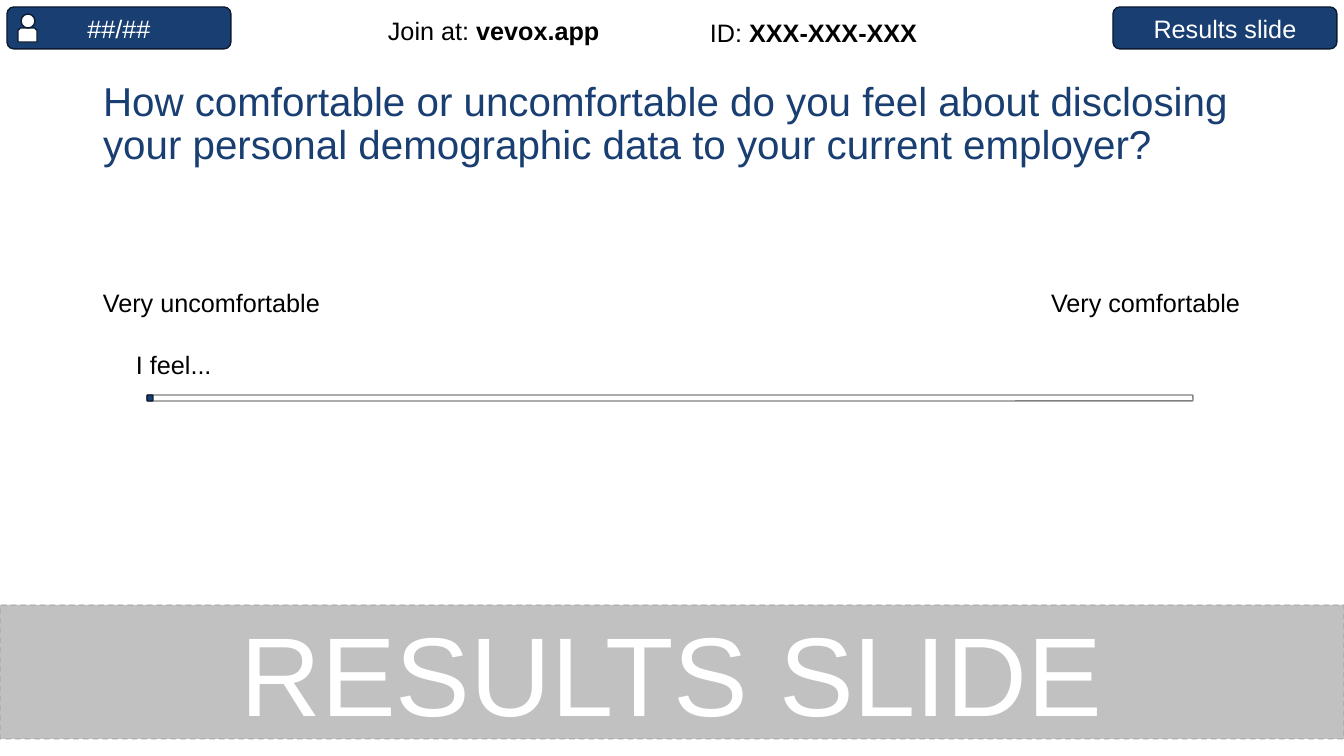
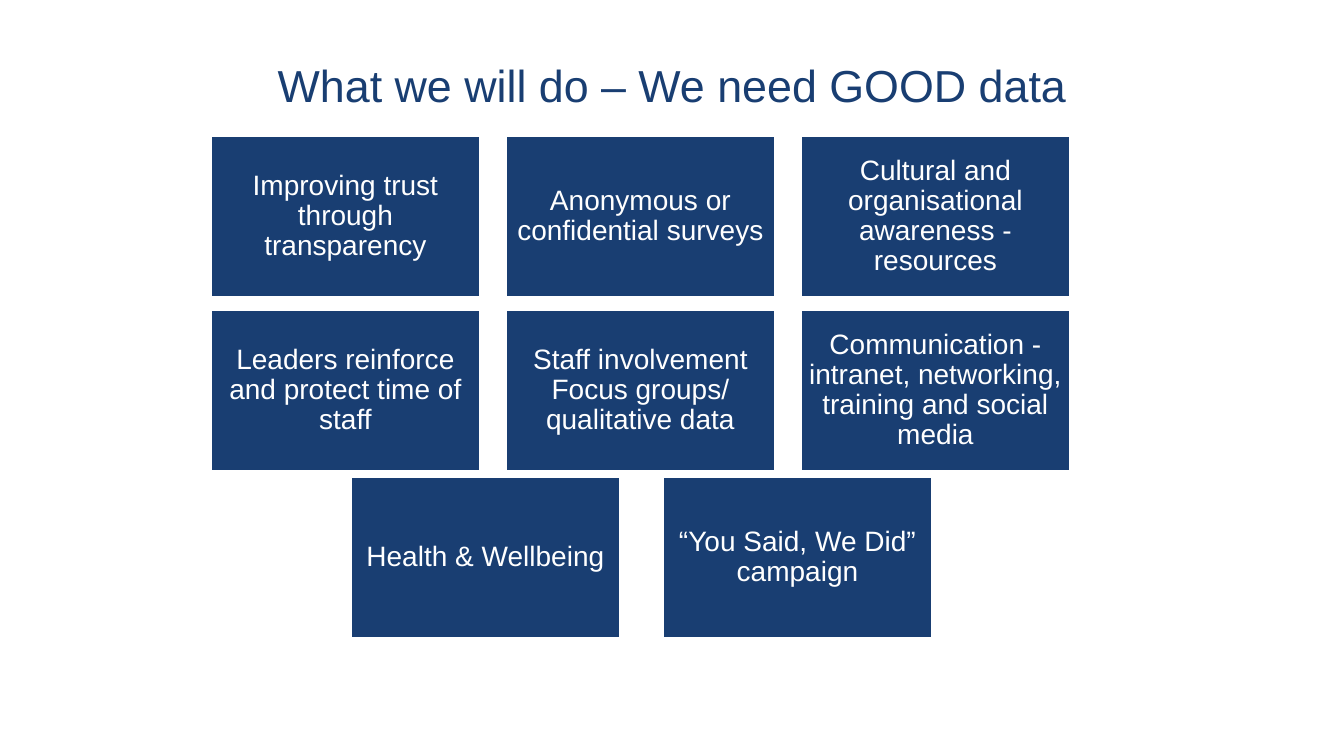
from dataclasses import dataclass

from lxml import etree
from pptx import Presentation
from pptx import util as u
from pptx.dml.color import RGBColor
from pptx.enum import dml, shapes, text
from pptx.oxml.ns import qn

Shape = shapes.MSO_SHAPE
Align = text.PP_ALIGN
Anchor = text.MSO_ANCHOR


@dataclass(frozen=True)
class Theme:
    font: str = "Arial"
    navy: str = "193E72"
    outline: str = "0B1B32"
    white: str = "FFFFFF"
    black: str = "000000"
    grey: str = "808080"
    band: str = "666666"
    band_opacity: int = 40
    question_size: float = 28.8
    title_size: float = 32
    label_size: float = 18
    card_size: float = 20
    band_size: float = 80


THEME = Theme()
SLIDE_SIZE = (1344, 756)
PX = u.Inches(1) / 100.8

# Content: poll slide
QUESTION = ("How comfortable or uncomfortable do you feel about disclosing "
            "your personal demographic data to your current employer?")
BADGES = [(7, "##/##"), (1113, "Results slide")]
PERSON = [(Shape.SNIP_2_SAME_RECTANGLE, (18, 28, 19, 14)),
          (Shape.OVAL, (21, 14, 14, 14))]
# Box, plain text, bold text, alignment
POLL_LABELS = [
    ((378, 10, 266, 42), "Join at: ", "vevox.app", Align.LEFT),
    ((700, 12, 266, 42), "ID: ", "XXX-XXX-XXX", Align.LEFT),
    ((93, 282, 565, 27), "Very uncomfortable", "", Align.LEFT),
    ((685, 282, 565, 27), "Very comfortable", "", Align.RIGHT),
    ((126, 344, 1159, 43), "I feel...", "", Align.LEFT),
]
SCALE_BAR = (147, 395, 1046, 6)
BAND = ((0, 605, 1344, 134), "RESULTS SLIDE")

# Content: actions slide
ACTIONS_TITLE = "What we will do – We need GOOD data"
CARD_SIZE = (269, 161)
# Top, left, column pitch, labels
CARD_ROWS = [
    (136, 211, 295, ["Improving trust through transparency",
                     "Anonymous or confidential surveys",
                     "Cultural and organisational awareness - resources"]),
    (310, 211, 295, ["Leaders reinforce and protect time of staff",
                     "Staff involvement Focus groups/ qualitative data",
                     "Communication - intranet, networking, training and social media"]),
    (477, 351, 312, ["Health & Wellbeing", "“You Said, We Did” campaign"]),
]


def px(value):
    return u.Emu(round(value * PX))


def place(box):
    return [px(value) for value in box]


def rgb(code):
    return RGBColor.from_string(code)


def style(paragraph, size, color, align=Align.LEFT, spacing=None):
    paragraph.alignment = align
    paragraph.line_spacing = spacing
    paragraph.font.name = THEME.font
    paragraph.font.size = u.Pt(size)
    paragraph.font.color.rgb = rgb(color)


def set_opacity(fill, percent):
    color = fill.fore_color._xFill.find(qn("a:srgbClr"))
    etree.SubElement(color, qn("a:alpha")).set("val", str(percent * 1000))


def add_slide(presentation, title, top, size, align):
    slide = presentation.slides.add_slide(presentation.slide_layouts[5])
    heading = slide.shapes.title
    heading.left, heading.top, heading.width, heading.height = place((93, top, 1159, 96))
    frame = heading.text_frame
    frame.text = title
    frame.auto_size = text.MSO_AUTO_SIZE.NONE
    frame.vertical_anchor = Anchor.MIDDLE
    style(frame.paragraphs[0], size, THEME.navy, align, 0.9)
    return slide


def add_box(slide, kind, box, fill, line):
    shape = slide.shapes.add_shape(kind, *place(box))
    shape.shadow.inherit = False
    if fill:
        shape.fill.solid()
        shape.fill.fore_color.rgb = rgb(fill)
    else:
        shape.fill.background()
    shape.line.color.rgb = rgb(line)
    shape.line.width = u.Pt(1)
    return shape


def write_in(shape, label, size, spacing=None):
    frame = shape.text_frame
    frame.text = label
    frame.word_wrap = True
    frame.vertical_anchor = Anchor.MIDDLE
    style(frame.paragraphs[0], size, THEME.white, Align.CENTER, spacing)
    return frame


def add_label(slide, box, plain, bold, align):
    frame = slide.shapes.add_textbox(*place(box)).text_frame
    frame.word_wrap = True
    paragraph = frame.paragraphs[0]
    paragraph.add_run().text = plain
    if bold:
        run = paragraph.add_run()
        run.text = bold
        run.font.bold = True
    style(paragraph, THEME.label_size, THEME.black, align)


def build_poll(presentation):
    slide = add_slide(presentation, QUESTION, 77, THEME.question_size, Align.LEFT)

    # Header badges with the participant icon
    for left, label in BADGES:
        badge = add_box(slide, Shape.ROUNDED_RECTANGLE, (left, 7, 224, 42),
                        THEME.navy, THEME.outline)
        write_in(badge, label, THEME.label_size)
    for kind, box in PERSON:
        add_box(slide, kind, box, THEME.white, THEME.outline)

    # Joining details and scale labels
    for label in POLL_LABELS:
        add_label(slide, *label)

    # Rating scale and its marker
    left, top, _, height = SCALE_BAR
    add_box(slide, Shape.ROUNDED_RECTANGLE, SCALE_BAR, None, THEME.grey)
    add_box(slide, Shape.ROUNDED_RECTANGLE, (left, top, height, height),
            THEME.navy, THEME.outline)

    # Translucent results band
    box, label = BAND
    band = add_box(slide, Shape.RECTANGLE, box, THEME.band, THEME.grey)
    band.line.dash_style = dml.MSO_LINE.DASH
    for fill in (band.fill, band.line.fill):
        set_opacity(fill, THEME.band_opacity)
    write_in(band, label, THEME.band_size)


def build_actions(presentation):
    slide = add_slide(presentation, ACTIONS_TITLE, 40, THEME.title_size, Align.CENTER)

    # Action cards
    for top, left, pitch, labels in CARD_ROWS:
        for column, label in enumerate(labels):
            card = add_box(slide, Shape.RECTANGLE, (left + column * pitch, top, *CARD_SIZE),
                           THEME.navy, THEME.white)
            frame = write_in(card, label, THEME.card_size, 0.9)
            frame.margin_left = frame.margin_right = px(8)
            frame.margin_top = frame.margin_bottom = px(8)


def main():
    presentation = Presentation()
    presentation.slide_width, presentation.slide_height = place(SLIDE_SIZE)
    build_poll(presentation)
    build_actions(presentation)
    presentation.save("out.pptx")


if __name__ == "__main__":
    main()
